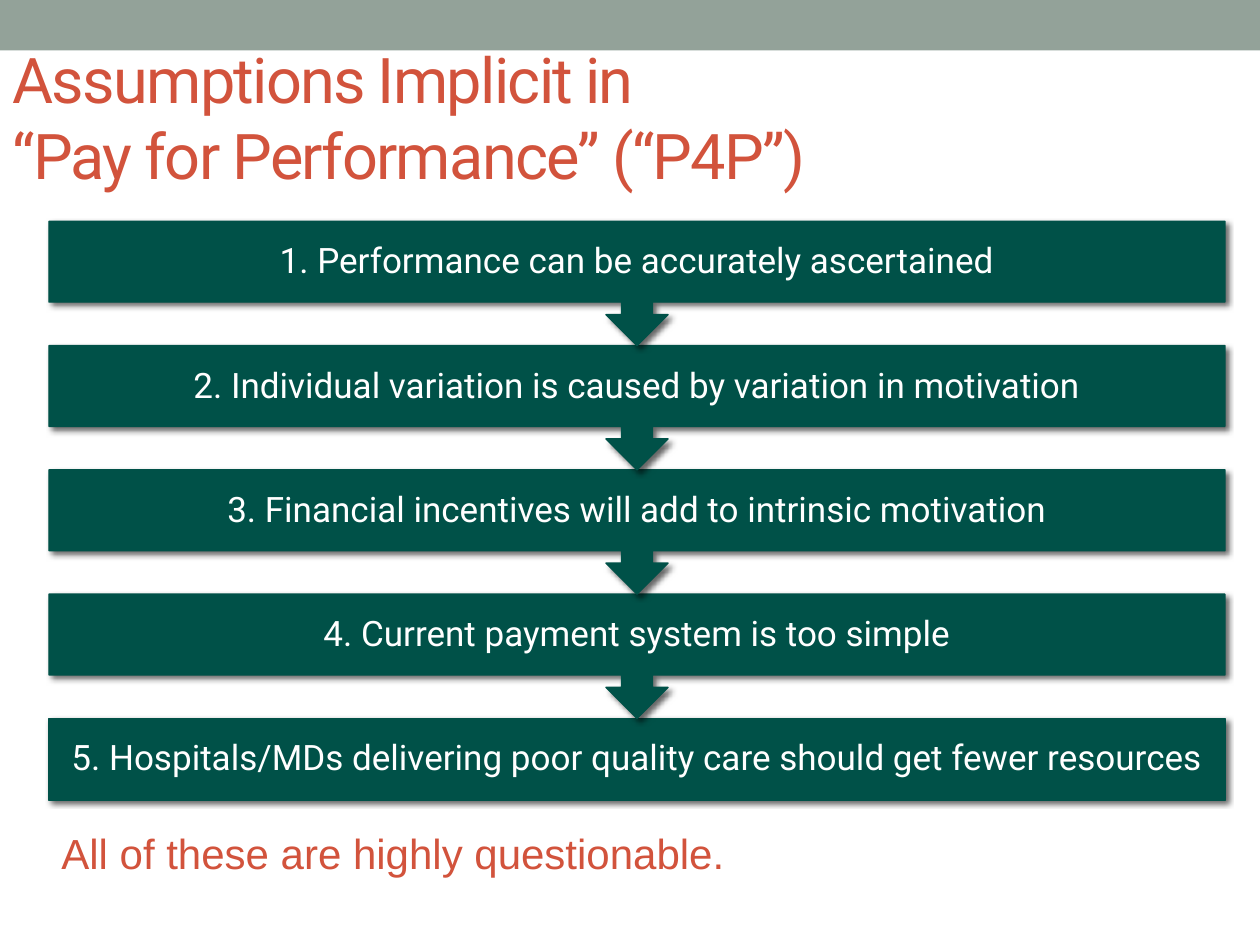
import copy

import pptx
import pptx.dml.color
import pptx.enum.shapes
import pptx.enum.text
import pptx.oxml
import pptx.oxml.ns
import pptx.util

Pt = pptx.util.Pt
SHAPE = pptx.enum.shapes.MSO_SHAPE
ALIGN = pptx.enum.text.PP_ALIGN
ANCHOR = pptx.enum.text.MSO_ANCHOR
qn = pptx.oxml.ns.qn

COLORS = {"band": "93A299", "accent": "D2533C", "step": "005148",
          "light": "FFFFFF", "shade": "000000"}

STEPS = [
    "1. Performance can be accurately ascertained",
    "2. Individual variation is caused by variation in motivation",
    "3. Financial incentives will add to intrinsic motivation",
    "4. Current payment system is too simple",
    "5. Hospitals/MDs delivering poor quality care should get fewer resources",
]


def color(name):
    return pptx.dml.color.RGBColor.from_string(COLORS[name])


def place(shape, box):
    shape.left, shape.top, shape.width, shape.height = map(Pt, box)


def write(shape, text, size, ink, font="Roboto", align=ALIGN.LEFT,
          anchor=ANCHOR.TOP, inset=None, lead=1.0, track=0):
    frame = shape.text_frame
    frame.word_wrap = True
    frame.auto_size = pptx.enum.text.MSO_AUTO_SIZE.NONE
    frame.vertical_anchor = anchor
    if inset is not None:
        frame.margin_left = frame.margin_right = Pt(inset)
        frame.margin_top = frame.margin_bottom = Pt(inset)
    para = frame.paragraphs[0]
    para.text = text
    para.alignment = align
    para.line_spacing = lead
    for run in para.runs:
        run.font.size = Pt(size)
        run.font.name = font
        run.font.color.rgb = color(ink)
        if track:
            run.font._element.set("spc", str(track * 100))
    # Line breaks take the format of the text around them
    for gap in para._p.findall(qn("a:br")):
        gap.append(copy.deepcopy(para.runs[0].font._element))


def block(slide, kind, box, fill):
    shape = slide.shapes.add_shape(kind, *map(Pt, box))
    shape.shadow.inherit = False
    shape.fill.solid()
    shape.fill.fore_color.rgb = color(fill)
    shape.line.fill.background()
    return shape


def shade(shape):
    """Cast a soft shadow to the lower right."""
    effect = shape._element.spPr.find(qn("a:effectLst"))
    effect.append(pptx.oxml.parse_xml(
        '<a:outerShdw xmlns:a="http://schemas.openxmlformats.org/drawingml/2006/main"'
        f' blurRad="{Pt(3)}" dist="{Pt(2)}" dir="2700000" rotWithShape="0">'
        f'<a:srgbClr val="{COLORS["shade"]}"><a:alpha val="60000"/></a:srgbClr>'
        '</a:outerShdw>'))


def header(slide, box):
    title = slide.shapes.title
    place(title, box)
    write(title, "Assumptions Implicit in\n“Pay for Performance” (“P4P”)",
          36, "accent", anchor=ANCHOR.MIDDLE, track=-1)


def chain(slide, box, steps, bar=47):
    left, top, width, height = box
    pitch = (height - bar) / (len(steps) - 1)
    # Last step first, so that each arrow tip lies over the next bar
    for i, text in reversed(list(enumerate(steps))):
        y = top + i * pitch
        last = i == len(steps) - 1
        kind = SHAPE.RECTANGLE if last else SHAPE.UP_ARROW_CALLOUT
        shape = block(slide, kind, (left, y, width, bar if last else pitch), "step")
        shape.rotation = 0 if last else 180
        shape.line.color.rgb = color("step")
        shape.line.width = Pt(0.75)
        shade(shape)
        label = slide.shapes.add_textbox(*map(Pt, (left, y, width, bar)))
        write(label, text, 20, "light", align=ALIGN.CENTER,
              anchor=ANCHOR.MIDDLE, inset=11.5, lead=0.9)


def footer(slide, box):
    note = slide.shapes.add_textbox(*map(Pt, box))
    write(note, "All of these are highly questionable.", 24, "accent", font="Arial")


def main():
    deck = pptx.Presentation()
    deck.slide_width, deck.slide_height = Pt(720), Pt(540)
    slide = deck.slides.add_slide(deck.slide_layouts[5])
    block(slide, SHAPE.RECTANGLE, (0, 0, 720, 28.8), "band")
    header(slide, (0, 21.6, 648, 90))
    chain(slide, (28, 126.5, 672, 331), STEPS)
    footer(slide, (28, 469.5, 668, 36))
    deck.save("out.pptx")


if __name__ == "__main__":
    main()
